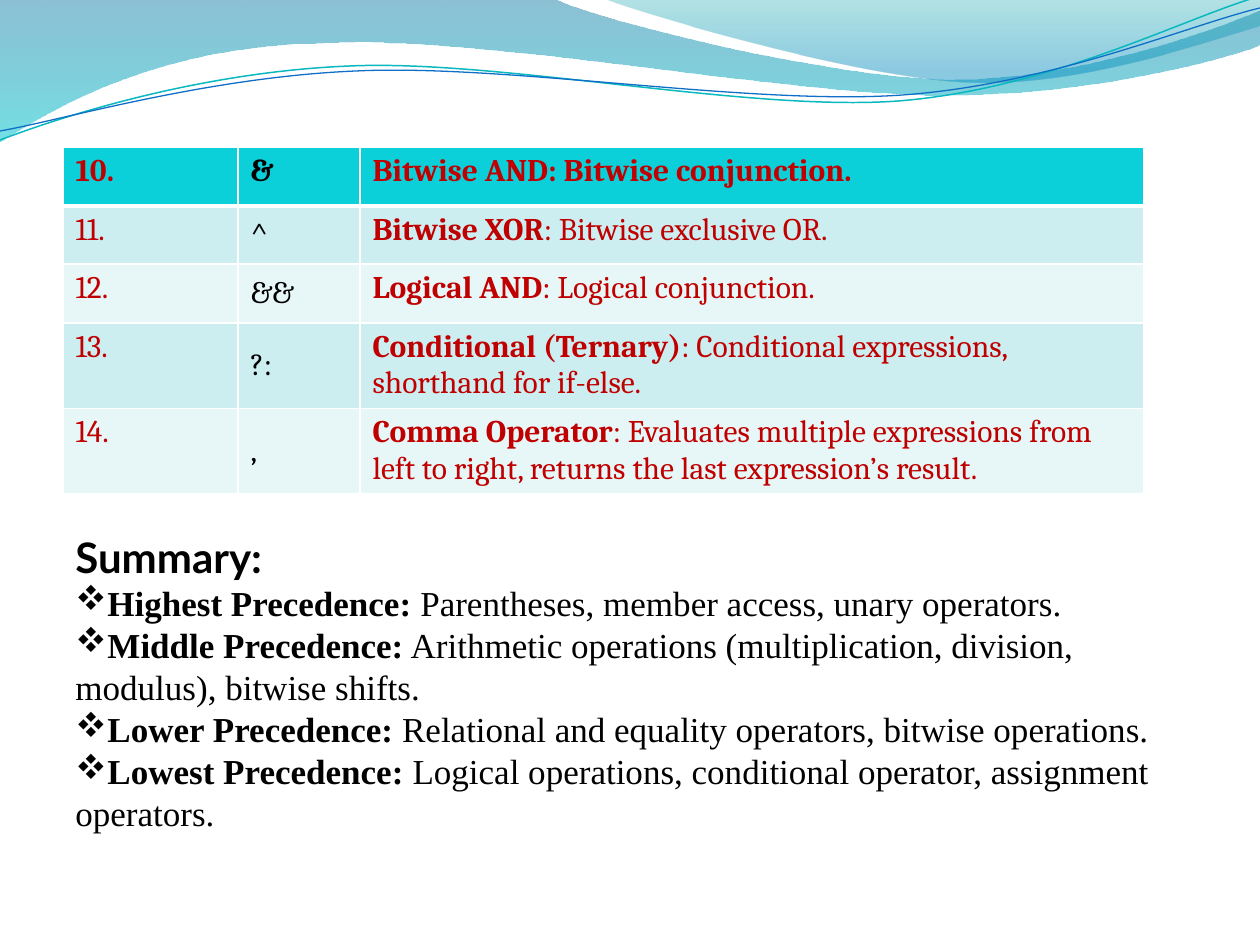
from lxml import etree
from pptx import Presentation
from pptx import util as u
from pptx.dml.color import RGBColor
from pptx.enum import text
from pptx.oxml.ns import qn

SCALE = 914400 / 126
COLORS = {
    "black": "000000", "white": "FFFFFF", "red": "C00000",
    "header": "0BD0D9", "band": "CCEEF1", "light": "E7F7F8",
    "teal_line": "0AB8BF", "blue_line": "0F6FC6",
    "deep_blue": "0074A1", "cyan": "00C6CF", "teal": "00A1A9", "sky": "008BBF",
}
BROAD_WAVE = [
    (0, 0), (554, -1), (600, 21, 837, 79, 955, 79), (1075, 79, 1207, 33, 1260, 11),
    (1261, 45), (1239, 55, 1096, 96, 940, 95), (784, 95, 481, 35, 324, 43),
    (163, 45, 58, 105, -1, 142), (0, 0),
]
CORNER_WAVE = [
    (604, -1), (641, 14, 859, 78, 969, 82), (1079, 87, 1211, 40, 1260, 26),
    (1260, 0), (604, -1),
]
TEAL_CURVE = [
    (0, 140), (60, 117, 199, 72, 349, 66), (498, 59, 747, 112, 898, 101),
    (1050, 89, 1182, 19, 1257, -3),
]
BLUE_CURVE = [
    (0, 131), (59, 121, 207, 77, 357, 71), (508, 64, 752, 106, 903, 95),
    (1053, 84, 1186, 26, 1260, 8),
]
COLUMNS = [175, 122, 784]
ROWS = [59, 58, 59, 59, 59]
OPERATORS = [
    ("&", "Bitwise AND", ": Bitwise conjunction."),
    ("^", "Bitwise XOR", ": Bitwise exclusive OR."),
    ("&&", "Logical AND", ": Logical conjunction."),
    ("?:", "Conditional (Ternary)", ": Conditional expressions, shorthand for if-else."),
    (",", "Comma Operator",
     ": Evaluates multiple expressions from left to right, returns the last expression’s result."),
]
SUMMARY = [
    ("Highest Precedence:", " Parentheses, member access, unary operators."),
    ("Middle Precedence:", " Arithmetic operations (multiplication, division, modulus), bitwise shifts."),
    ("Lower Precedence:", " Relational and equality operators, bitwise operations."),
    ("Lowest Precedence:", " Logical operations, conditional operator, assignment operators."),
]


def px(n):
    return u.Emu(round(n * SCALE))


def rgb(name):
    return RGBColor.from_string(COLORS[name])


def bend(sp, segments):
    lines = iter(list(sp.element.spPr.iter(qn("a:lnTo"))))
    for seg in segments[1:]:
        group = [next(lines) for _ in range(len(seg) // 2)]
        if len(group) == 3:
            curve = etree.Element(qn("a:cubicBezTo"))
            group[0].addprevious(curve)
            for line in group:
                curve.append(line[0])
                line.getparent().remove(line)


def add_outline(s, segments, close):
    points = [(px(seg[i]), px(seg[i + 1])) for seg in segments for i in range(0, len(seg), 2)]
    builder = s.shapes.build_freeform(*points[0])
    builder.add_line_segments(points[1:], close=close)
    sp = builder.convert_to_shape()
    bend(sp, segments)
    sp.shadow.inherit = False
    return sp


def add_wave(s, segments, stops):
    sp = add_outline(s, segments, True)
    sp.line.fill.background()
    sp.fill.gradient()
    sp.fill.gradient_angle = 270
    for stop, (position, color, _) in zip(sp.fill.gradient_stops, stops):
        stop.position = position
        stop.color.rgb = rgb(color)
    for clr, (_, _, opacity) in zip(sp.element.spPr.iter(qn("a:srgbClr")), stops):
        etree.SubElement(clr, qn("a:alpha"), val=str(opacity * 1000))


def add_curve(s, segments, color, width):
    sp = add_outline(s, segments, False)
    sp.fill.background()
    sp.line.color.rgb = rgb(color)
    sp.line.width = u.Pt(width)


def add_run(p, value, font, size, color, bold):
    r = p.add_run()
    r.text = value
    r.font.name = font
    r.font.size = u.Pt(size)
    r.font.color.rgb = rgb(color)
    r.font.bold = bold


def set_borders(cell, top, bottom):
    tcPr = cell._tc.get_or_add_tcPr()
    for side, width in (("L", 1), ("R", 1), ("T", top), ("B", bottom)):
        ln = etree.SubElement(tcPr, qn("a:ln" + side), w=str(u.Pt(width)))
        fill = etree.SubElement(ln, qn("a:solidFill"))
        etree.SubElement(fill, qn("a:srgbClr"), val=COLORS["white"])


def fill_cell(cell, row, runs, color):
    set_borders(cell, 3 if row == 1 else 1, 3 if row == 0 else 1)
    cell.fill.solid()
    cell.fill.fore_color.rgb = rgb("header" if row == 0 else "band" if row % 2 else "light")
    for value, bold in runs:
        add_run(cell.text_frame.paragraphs[0], value, "Cambria", 18, color, bold)


def add_operator_table(s):
    table = s.shapes.add_table(len(ROWS), len(COLUMNS), px(63), px(147),
                               px(sum(COLUMNS)), px(353)).table
    for column, width in zip(table.columns, COLUMNS):
        column.width = px(width)
    for i, (height, (symbol, name, meaning)) in enumerate(zip(ROWS, OPERATORS)):
        table.rows[i].height = px(height)
        header = i == 0
        description = [(name + meaning, True)] if header else [(name, True), (meaning, False)]
        fill_cell(table.cell(i, 0), i, [(f"{i + 10}.", header)], "red")
        fill_cell(table.cell(i, 1), i, [(symbol, header)], "black")
        fill_cell(table.cell(i, 2), i, description, "red")
        if not header:
            table.cell(i, 1).vertical_anchor = text.MSO_ANCHOR.MIDDLE


def add_summary(s):
    tf = s.shapes.add_textbox(px(63), px(525), px(1102), px(398)).text_frame
    tf.word_wrap = True
    add_run(tf.paragraphs[0], "Summary:", "Lato", 24, "black", True)
    for level, operators in SUMMARY:
        p = tf.add_paragraph()
        pPr = p._p.get_or_add_pPr()
        pPr.set("marL", "0")
        pPr.set("indent", "0")
        etree.SubElement(pPr, qn("a:buFont"), typeface="Wingdings", charset="2")
        etree.SubElement(pPr, qn("a:buChar"), char="v")
        add_run(p, level, "Times New Roman", 20, "black", True)
        add_run(p, operators, "Times New Roman", 20, "black", False)


def main():
    prs = Presentation()
    prs.slide_width, prs.slide_height = px(1260), px(945)
    s = prs.slides.add_slide(prs.slide_layouts[6])
    add_wave(s, BROAD_WAVE, [(0, "deep_blue", 45), (1, "cyan", 55)])
    add_wave(s, CORNER_WAVE, [(0, "teal", 30), (0.8, "sky", 45)])
    add_curve(s, TEAL_CURVE, "teal_line", 0.85)
    add_curve(s, BLUE_CURVE, "blue_line", 0.75)
    add_operator_table(s)
    add_summary(s)
    prs.save("out.pptx")


if __name__ == "__main__":
    main()
